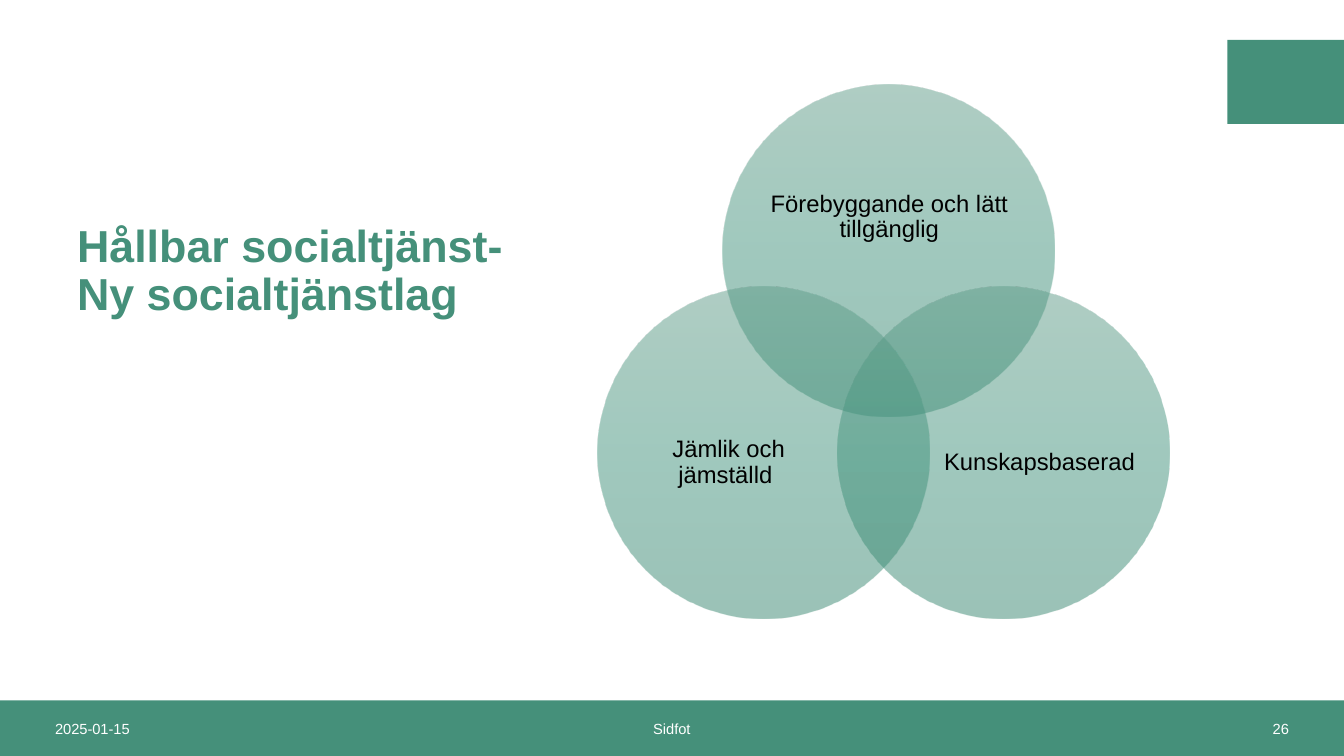
import pptx
import pptx.util
import pptx.oxml
import pptx.oxml.ns
import pptx.dml.color
import pptx.enum.shapes
import pptx.enum.text

PX = 9525
WIDE, HIGH = 1280, 720
HUES = {
    "green": "45907A", "white": "FFFFFF", "black": "000000",
    "top": "609D8A", "mid": "41947C", "low": "37876F",
}
ALIGN = pptx.enum.text.PP_ALIGN
ANCHOR = pptx.enum.text.MSO_ANCHOR
KINDS = pptx.enum.shapes.MSO_SHAPE


def scale(*box):
    """Turn px lengths into EMU."""
    return [pptx.util.Emu(n * PX) for n in box]


def tint(name):
    """Return a named colour."""
    return pptx.dml.color.RGBColor.from_string(HUES[name])


def label(slide, box, words, size, hue, align, anchor=ANCHOR.MIDDLE,
          inset=None, gap=1.0, bold=False):
    """Place one paragraph of text in a box."""
    frame = slide.shapes.add_textbox(*scale(*box)).text_frame
    form = {"word_wrap": True, "vertical_anchor": anchor}
    if inset is not None:
        for side in ("left", "top", "right", "bottom"):
            form["margin_" + side] = inset
    para = frame.paragraphs[0]
    para.text = words
    font = para.runs[0].font
    font.color.rgb = tint(hue)
    looks = (
        (frame, form),
        (para, {"alignment": align, "line_spacing": gap}),
        (font, {"name": "Arial", "size": pptx.util.Pt(size), "bold": bold}),
    )
    for part, values in looks:
        for key, value in values.items():
            setattr(part, key, value)


def block(slide, box):
    """Place a plain green rectangle."""
    shape = slide.shapes.add_shape(KINDS.RECTANGLE, *scale(*box))
    shape.shadow.inherit = False
    shape.fill.solid()
    shape.fill.fore_color.rgb = tint("green")
    shape.line.fill.background()


def disc(slide, x, y, size):
    """Place a half-clear circle shaded from top to bottom."""
    shape = slide.shapes.add_shape(KINDS.OVAL, *scale(x, y, size, size))
    stops = "".join(
        f'<a:gs pos="{pos}"><a:srgbClr val="{HUES[hue]}">'
        '<a:alpha val="50000"/></a:srgbClr></a:gs>'
        for pos, hue in ((0, "top"), (50000, "mid"), (100000, "low"))
    )
    fill = pptx.oxml.parse_xml(
        f'<a:gradFill {pptx.oxml.ns.nsdecls("a")} rotWithShape="1">'
        f'<a:gsLst>{stops}</a:gsLst>'
        '<a:lin ang="5400000" scaled="0"/></a:gradFill>'
    )
    shape._element.spPr.insert(2, fill)
    shape.line.fill.background()
    shape.shadow.inherit = False


def venn(slide, box):
    """Place three overlapping circles with their labels."""
    left, top, wide, high = box
    size = 316
    low = high - size
    parts = (
        (119, 0, (43, 55, 232, 142), "Förebyggande och lätt tillgänglig"),
        (wide - size, low, (97, 81, 190, 174), "Kunskapsbaserad"),
        (0, low, (30, 81, 190, 174), "Jämlik och jämställd "),
    )
    for x, y, (dx, dy, w, h), words in parts:
        x, y = left + x, top + y
        disc(slide, x, y, size)
        label(slide, (x + dx, y + dy, w, h), words, 17, "black",
              ALIGN.CENTER, inset=0, gap=0.9)


def footer(slide, box):
    """Place the bottom band with date, footer text and page number."""
    left, top, wide, high = box
    block(slide, box)
    edge, side, mid = 43, 333, 432
    parts = (
        (edge, side, "2025-01-15", ALIGN.LEFT),
        ((wide - mid) // 2, mid, "Sidfot", ALIGN.CENTER),
        (wide - edge - side, side, "26", ALIGN.RIGHT),
    )
    for x, w, words, align in parts:
        label(slide, (left + x, top, w, high), words, 10.5, "white", align)


def main():
    """Build and save the slide."""
    deck = pptx.Presentation()
    deck.slide_width, deck.slide_height = scale(WIDE, HIGH)
    slide = deck.slides.add_slide(deck.slide_layouts[6])
    footer(slide, (0, 667, WIDE, 53))
    block(slide, (1169, 38, 111, 80))
    label(slide, (64, 208, 458, 102), "Hållbar socialtjänst- Ny socialtjänstlag",
          32, "green", ALIGN.LEFT, ANCHOR.BOTTOM, gap=0.9, bold=True)
    venn(slide, (569, 81, 545, 508))
    deck.save("out.pptx")


if __name__ == "__main__":
    main()
